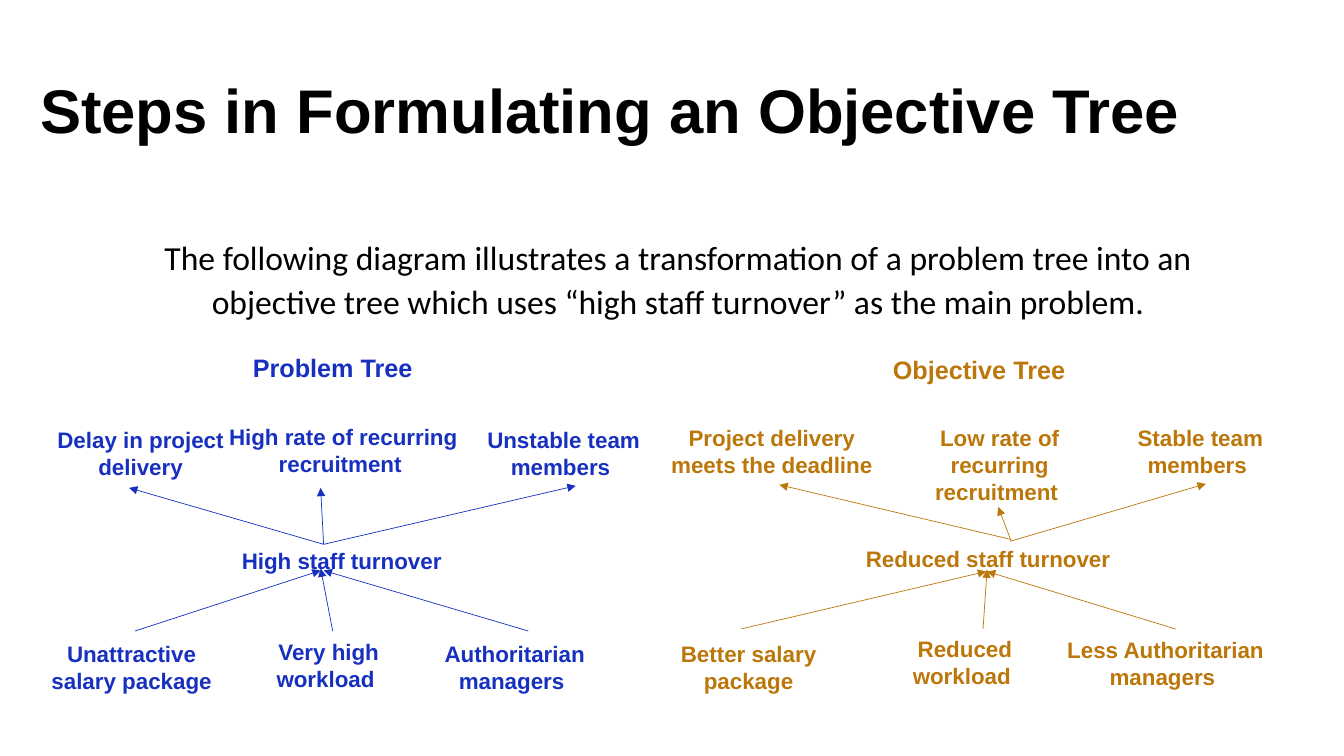
from dataclasses import dataclass

import pptx
import pptx.dml.color
import pptx.enum.shapes
import pptx.enum.text
import pptx.oxml.ns
import pptx.shapes.shapetree
import pptx.util
from lxml import etree

Inches = pptx.util.Inches
Pt = pptx.util.Pt
ALIGN = pptx.enum.text.PP_ALIGN
ANCHOR = pptx.enum.text.MSO_ANCHOR

COLORS = {"black": "000000", "blue": "1830C0", "gold": "BC770B"}


@dataclass
class Label:
    text: str
    left: float
    top: float
    width: float
    height: float = 0.63
    size: int = 16


@dataclass
class Arrow:
    start: tuple[float, float]
    end: tuple[float, float]


@dataclass
class Tree:
    color: str
    labels: list[Label]
    arrows: list[Arrow]


TREES = [
    Tree(
        "blue",
        [
            Label("Problem Tree", 2.19, 3.45, 2.22, 0.42, 18),
            Label("High staff turnover", 1.92, 5.38, 2.94, 0.34),
            Label("Delay in project delivery", 0.46, 4.18, 1.87),
            Label("High rate of recurring recruitment ", 2.17, 4.15, 2.47),
            Label("Unstable team members ", 4.65, 4.18, 1.88),
            Label("Unattractive salary package", 0.3, 6.3, 2.01),
            Label("Very high workload ", 2.44, 6.28, 1.64),
            Label("Authoritarian managers ", 4.04, 6.3, 2.13),
        ],
        [
            Arrow((3.21, 5.4), (1.28, 4.84)),
            Arrow((3.21, 5.4), (3.18, 4.84)),
            Arrow((3.21, 5.4), (5.71, 4.82)),
            Arrow((1.34, 6.26), (3.18, 5.66)),
            Arrow((3.3, 6.26), (3.18, 5.64)),
            Arrow((5.24, 6.26), (3.21, 5.66)),
        ],
    ),
    Tree(
        "gold",
        [
            Label("Objective Tree", 8.6, 3.47, 2.22, 0.46, 18),
            Label("Reduced staff turnover", 8.36, 5.36, 2.88, 0.29),
            Label("Project delivery meets the deadline", 6.51, 4.16, 2.29),
            Label("Low rate of recurring recruitment ", 8.95, 4.16, 1.93),
            Label("Stable team members ", 11.05, 4.16, 1.71),
            Label("Better salary package", 6.41, 6.3, 2.03),
            Label("Reduced workload ", 8.73, 6.25, 1.68),
            Label("Less Authoritarian managers ", 10.42, 6.26, 2.28),
        ],
        [
            Arrow((10.02, 5.35), (7.73, 4.81)),
            Arrow((10.03, 5.37), (9.9, 5.03)),
            Arrow((10.02, 5.37), (11.96, 4.8)),
            Arrow((7.35, 6.24), (9.78, 5.67)),
            Arrow((9.75, 6.24), (9.79, 5.65)),
            Arrow((11.66, 6.24), (9.79, 5.67)),
        ],
    ),
]


def add_text(shapes, label: Label, *, color: str = "black", font: str = "Arial",
             bold: bool = True, align=ALIGN.CENTER, anchor=ANCHOR.TOP,
             spacing: float | None = None, before: float = 0,
             after: float = 0, indent: float = 0) -> None:
    box = shapes.add_textbox(Inches(label.left), Inches(label.top),
                             Inches(label.width), Inches(label.height))
    frame = box.text_frame
    frame.word_wrap = True
    frame.vertical_anchor = anchor
    para = frame.paragraphs[0]
    para.alignment = align
    para.line_spacing = spacing
    para.space_before = Pt(before)
    para.space_after = Pt(after)
    if indent:
        para._p.get_or_add_pPr().set("marL", str(Inches(indent)))
    run = para.add_run()
    run.text = label.text
    run.font.name = font
    run.font.size = Pt(label.size)
    run.font.bold = bold
    run.font.color.rgb = pptx.dml.color.RGBColor.from_string(COLORS[color])


def add_arrow(shapes, arrow: Arrow, color: str) -> None:
    ends = [Inches(v) for v in (*arrow.start, *arrow.end)]
    link = shapes.add_connector(pptx.enum.shapes.MSO_CONNECTOR.STRAIGHT, *ends)
    link.line.width = Pt(0.5)
    link.line.color.rgb = pptx.dml.color.RGBColor.from_string(COLORS[color])
    qn = pptx.oxml.ns.qn
    etree.SubElement(link.line._get_or_add_ln(), qn("a:tailEnd"), type="triangle")
    etree.SubElement(link._element.spPr, qn("a:effectLst"))


def add_tree(shapes, tree: Tree) -> None:
    group = shapes.add_group_shape()
    for label in tree.labels:
        add_text(group.shapes, label, color=tree.color)
    for arrow in tree.arrows:
        add_arrow(group.shapes, arrow, tree.color)


def main() -> None:
    deck = pptx.Presentation()
    deck.slide_width = Inches(13.33)
    deck.slide_height = Inches(7.5)
    shapes = deck.slides.add_slide(deck.slide_layouts[6]).shapes
    add_text(shapes,
             Label("Steps in Formulating an Objective Tree", 0.3, 0.4, 12.11, 1.45, 44),
             align=ALIGN.LEFT, anchor=ANCHOR.MIDDLE, spacing=0.9)
    intro = ("The following diagram illustrates a transformation of a problem tree "
             "into an objective tree which uses “high staff turnover” as the main problem.")
    add_text(shapes, Label(intro, 0.92, 2.26, 11.5, 1.08, 24), font="Calibri",
             bold=False, spacing=1.1, before=10, after=6, indent=0.11)
    for tree in TREES:
        add_tree(shapes, tree)
    deck.save("out.pptx")


if __name__ == "__main__":
    main()
